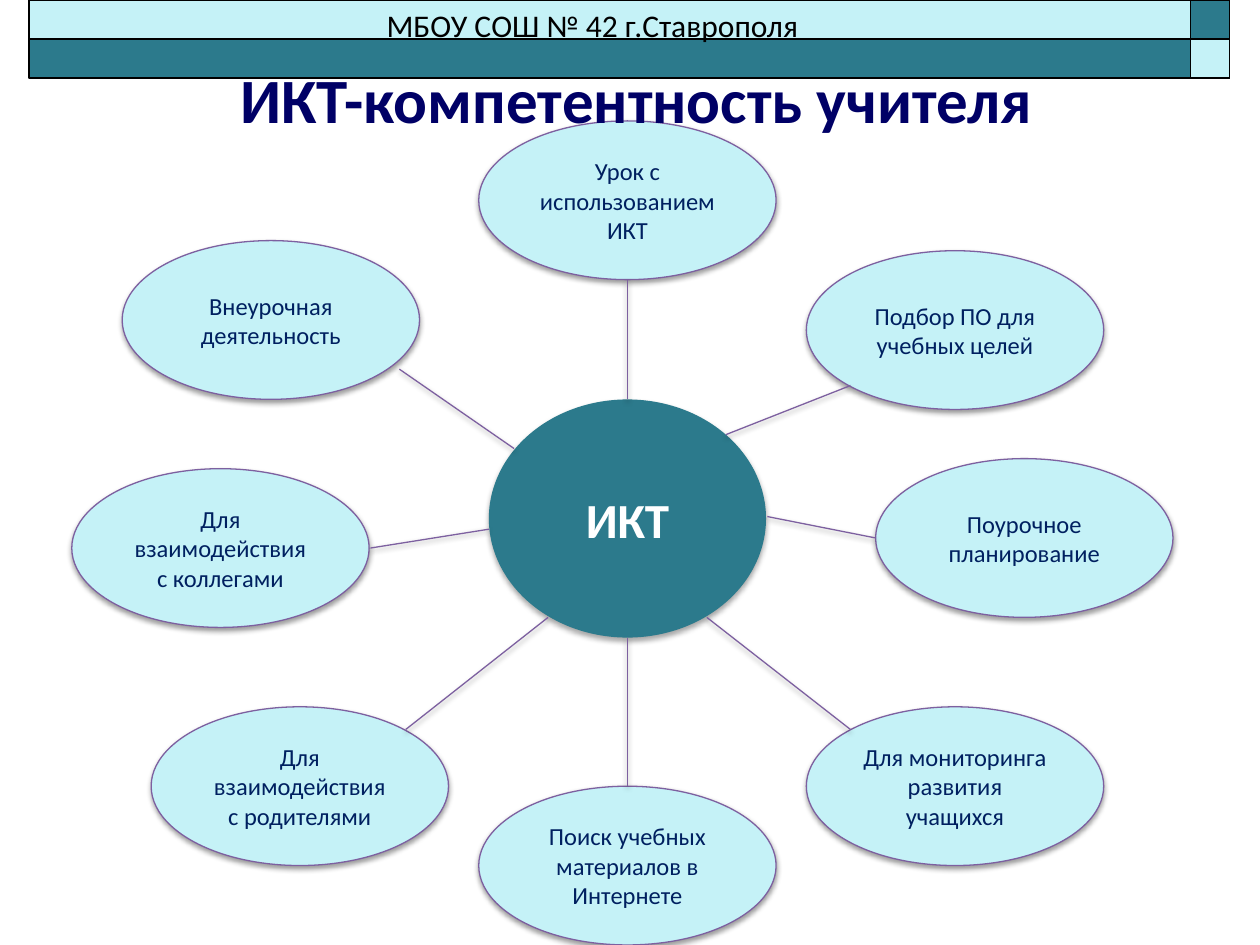
from lxml.etree import SubElement
from pptx import Presentation
from pptx.dml.color import RGBColor
from pptx.enum.shapes import MSO_CONNECTOR, MSO_SHAPE
from pptx.enum.text import MSO_ANCHOR, PP_ALIGN
from pptx.oxml.ns import qn
from pptx.util import Inches, Pt

COLORS = {
    "pale": "C5F2F7", "teal": "2C7A8C", "purple": "7D60A0", "navy": "002060",
    "title": "000066", "black": "000000", "white": "FFFFFF",
}
FONT = "Calibri"
SCHOOL = "МБОУ СОШ № 42 г.Ставрополя"
TITLE = "ИКТ-компетентность учителя"
HUB = ("ИКТ", (3.88, 3.17, 2.2, 1.89))
TOPIC_SIZE = (2.36, 1.26)
# Topic, its left and top, then the ends of its spoke
TOPICS = [
    ("Урок с использованием ИКТ", (3.8, 0.96), (4.98, 3.17), (4.98, 2.22)),
    ("Подбор ПО для учебных целей", (6.4, 1.99), (5.76, 3.45), (6.75, 3.06)),
    ("Поурочное планирование", (6.95, 3.64), (6.09, 4.1), (6.95, 4.27)),
    ("Для мониторинга развития учащихся", (6.4, 5.61), (5.61, 4.9), (6.75, 5.79)),
    ("Поиск учебных материалов в Интернете", (3.8, 6.24), (4.98, 5.06), (4.98, 6.24)),
    ("Для взаимодействия с родителями", (1.2, 5.61), (4.35, 4.9), (3.22, 5.79)),
    ("Для взаимодействия с коллегами", (0.57, 3.72), (3.88, 4.2), (2.94, 4.35)),
    ("Внеурочная деятельность", (0.97, 1.91), (4.08, 3.56), (3.17, 2.93)),
]
BAND_LEFT, BAND_WIDTH, BAND_HEIGHT = 0.23, 9.53, 0.31


def color(name):
    return RGBColor.from_string(COLORS[name])


def add_shadow(effects, opacity, distance):
    shadow = SubElement(effects, qn("a:outerShdw"), blurRad=str(Pt(3.1)),
                        dist=str(Pt(distance)), dir="5400000", rotWithShape="0")
    tint = SubElement(shadow, qn("a:srgbClr"), val=COLORS["black"])
    SubElement(tint, qn("a:alpha"), val=str(opacity * 1000))


def write(shape, text, size, ink, bold=False, align=PP_ALIGN.CENTER):
    shape.text_frame.word_wrap = True
    para = shape.text_frame.paragraphs[0]
    para.text = text
    para.alignment = align
    para.font.name, para.font.size, para.font.bold = FONT, Pt(size), bold
    para.font.color.rgb = color(ink)
    return para


def add_filled(page, kind, bounds, fill, line=None):
    shape = page.shapes.add_shape(kind, *map(Inches, bounds))
    shape.fill.solid()
    shape.fill.fore_color.rgb = color(fill)
    if line:
        shape.line.color.rgb = color(line)
        shape.line.width = Pt(0.75)
    else:
        shape.line.fill.background()
    shape.shadow.inherit = False
    return shape


def add_ellipse(page, text, bounds, fill, line, size, ink, bold, opacity, distance):
    ellipse = add_filled(page, MSO_SHAPE.OVAL, bounds, fill, line)
    add_shadow(ellipse._element.spPr.find(qn("a:effectLst")), opacity, distance)
    ellipse.text_frame.vertical_anchor = MSO_ANCHOR.MIDDLE
    write(ellipse, text, size, ink, bold)


def add_spoke(page, start, end):
    spoke = page.shapes.add_connector(MSO_CONNECTOR.STRAIGHT,
                                      *map(Inches, start + end))
    spoke.line.color.rgb = color("purple")
    spoke.line.width = Pt(0.75)
    add_shadow(SubElement(spoke._element.spPr, qn("a:effectLst")), 38, 1.6)


def add_header(page):
    """Two bands, each ending in a square of the other band's colour."""
    square_left = BAND_LEFT + BAND_WIDTH - BAND_HEIGHT
    pieces = [(BAND_LEFT, BAND_WIDTH, ("pale", "teal")),
              (square_left, BAND_HEIGHT, ("teal", "pale"))]
    for left, width, fills in pieces:
        for row, fill in enumerate(fills):
            bounds = (left, row * BAND_HEIGHT, width, BAND_HEIGHT)
            add_filled(page, MSO_SHAPE.RECTANGLE, bounds, fill, "black")
    box = page.shapes.add_textbox(Inches(2.97), 0, Inches(3.83), Inches(0.4))
    write(box, SCHOOL, 18, "black", align=PP_ALIGN.LEFT)


def main():
    deck = Presentation()
    deck.slide_width, deck.slide_height = Inches(10), Inches(7.5)
    page = deck.slides.add_slide(deck.slide_layouts[6])

    add_ellipse(page, *HUB, "teal", None, 28, "white", True, 35, 1.8)
    for text, corner, _, _ in TOPICS:
        add_ellipse(page, text, corner + TOPIC_SIZE, "pale", "purple",
                    14, "navy", False, 38, 1.6)
    for _, _, start, end in TOPICS:
        add_spoke(page, start, end)

    title = page.shapes.add_textbox(*map(Inches, (0.55, 0.55, 9, 0.63)))
    write(title, TITLE, 36, "title", bold=True).line_spacing = 0.8
    add_header(page)
    deck.save("out.pptx")


if __name__ == "__main__":
    main()
